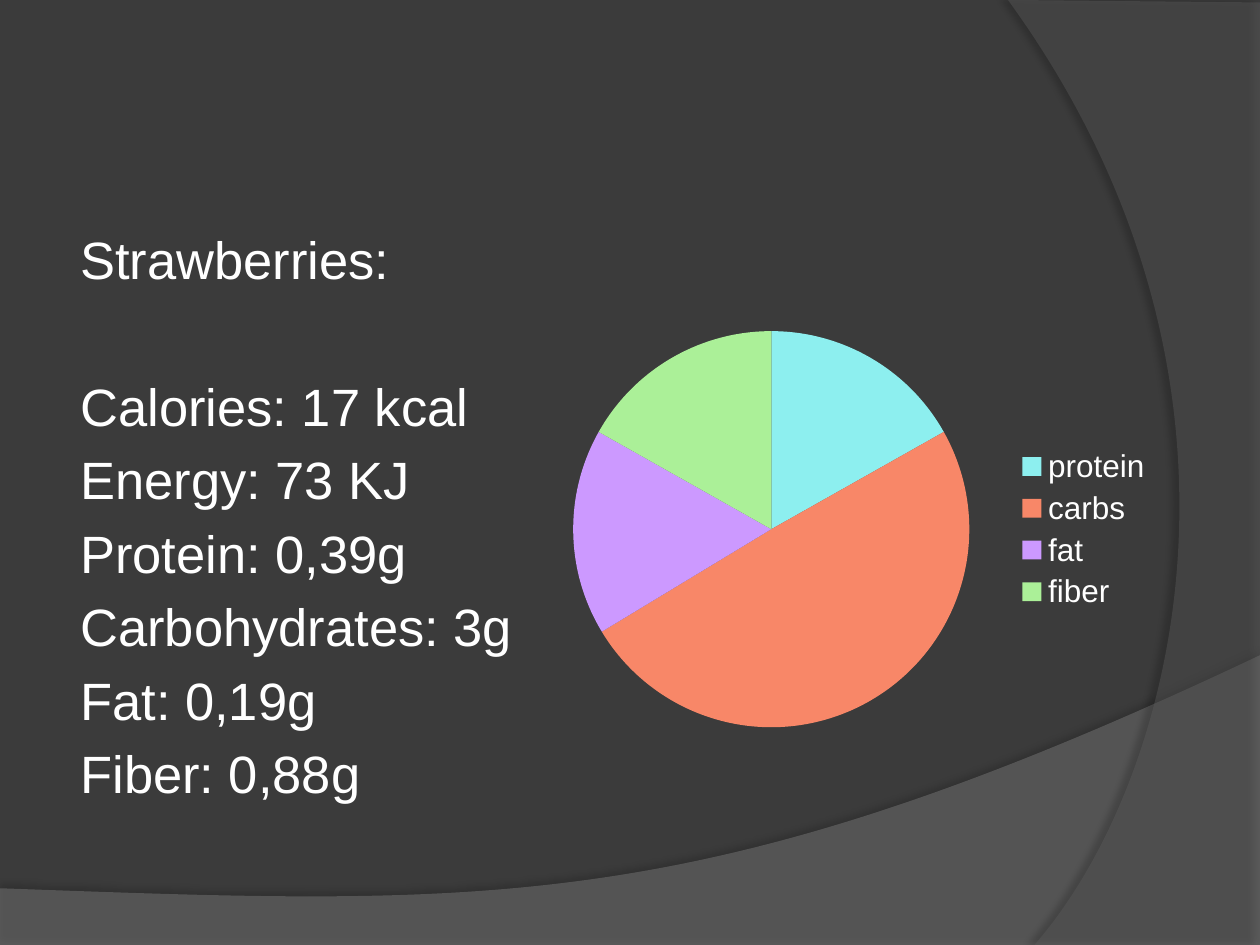
"""Build a dark nutrition slide for strawberries with a pie chart."""
from lxml import etree
from pptx import Presentation
from pptx.chart.data import CategoryChartData
from pptx.dml.color import RGBColor
from pptx.enum.chart import XL_CHART_TYPE, XL_LEGEND_POSITION
from pptx.oxml.ns import qn
from pptx.util import Inches, Pt

PIE = XL_CHART_TYPE.PIE
RIGHT = XL_LEGEND_POSITION.RIGHT

FONT = "Arial"
DARK = RGBColor(0x3B, 0x3B, 0x3B)
WHITE = RGBColor(0xFF, 0xFF, 0xFF)
BLACK = RGBColor(0, 0, 0)
MID_GRAY = RGBColor(0x7F, 0x7F, 0x7F)
DIM_GRAY = RGBColor(0x5E, 0x5E, 0x5E)

HEADING = "Strawberries:"
FACTS = [
    "Calories: 17 kcal",
    "Energy: 73 KJ",
    "Protein: 0,39g",
    "Carbohydrates: 3g",
    "Fat: 0,19g",
    "Fiber: 0,88g",
]
SHARES = [
    ("protein", 17, RGBColor(0x8D, 0xEF, 0xEF)),
    ("carbs", 50, RGBColor(0xF8, 0x87, 0x68)),
    ("fat", 17, RGBColor(0xCC, 0x99, 0xFF)),
    ("fiber", 17, RGBColor(0xAB, 0xF0, 0x98)),
]
WAVES = [
    {"corners": [(0, 7.05), (0, 7.51), (10, 7.51)],
     "curve": [(10, 5.2), (5.59, 7.29), (3.91, 7.19), (0, 7.05)],
     "width": 10, "color": MID_GRAY, "alpha": 45,
     "shadow": {"alpha": 35, "blur": 4, "dist": 3.5, "angle": 270}},
    {"corners": [(10, 0.02), (10, 7.5)],
     "curve": [(8.21, 7.5), (9.35, 6.19), (10.18, 3), (8, 0)],
     "width": 2, "color": DIM_GRAY, "alpha": 40,
     "shadow": {"alpha": 45, "blur": 4, "dist": 4, "angle": 180}},
]
TEXT_SIZE = 30
PARA_GAP = 6
LINE_PITCH = 42


def set_alpha(color, percent):
    etree.SubElement(color, qn("a:alpha"), val=str(percent * 1000))


def add_shadow(sp, alpha, blur, dist, angle):
    effects = etree.SubElement(sp._element.spPr, qn("a:effectLst"))
    shadow = etree.SubElement(
        effects, qn("a:outerShdw"), blurRad=str(Pt(blur)), dist=str(Pt(dist)),
        dir=str(angle * 60000), algn="ctr", rotWithShape="0")
    set_alpha(etree.SubElement(shadow, qn("a:srgbClr"), val=str(BLACK)), alpha)


def bend_last_segments(sp, width):
    outline = sp._element.spPr.find(".//" + qn("a:pathLst"))[0]
    segments = outline.findall(qn("a:lnTo"))[-3:]
    curve = etree.Element(qn("a:cubicBezTo"))
    segments[0].addprevious(curve)
    for segment in segments:
        curve.append(segment[0])
        outline.remove(segment)
    sp.width = width
    outline.set("w", str(width))


def add_wave(s, wave):
    points = [(Inches(x), Inches(y)) for x, y in wave["corners"] + wave["curve"]]
    builder = s.shapes.build_freeform(*points[0])
    builder.add_line_segments(points[1:], close=True)
    sp = builder.convert_to_shape()
    bend_last_segments(sp, Inches(wave["width"]))
    sp.fill.solid()
    sp.fill.fore_color.rgb = wave["color"]
    set_alpha(sp._element.spPr.find(".//" + qn("a:srgbClr")), wave["alpha"])
    sp.line.fill.background()
    add_shadow(sp, **wave["shadow"])


def add_facts(s):
    sp = s.shapes.add_textbox(Inches(0.5), Inches(1.75), Inches(8.17), Inches(4.95))
    tf = sp.text_frame
    tf.word_wrap = True
    gaps = [0, LINE_PITCH + PARA_GAP] + [PARA_GAP] * (len(FACTS) - 1)
    for i, (text, gap) in enumerate(zip([HEADING] + FACTS, gaps)):
        p = tf.add_paragraph() if i else tf.paragraphs[0]
        p.space_before = Pt(gap)
        pPr = p._p.get_or_add_pPr()
        pPr.set("marL", str(Inches(0.46)))
        pPr.set("indent", str(Inches(-0.42)))
        r = p.add_run()
        r.text = text
        r.font.name = FONT
        r.font.size = Pt(TEXT_SIZE)
        r.font.color.rgb = WHITE


def add_pie(s):
    data = CategoryChartData()
    data.categories = [name for name, _, _ in SHARES]
    data.add_series("Series 1", [value for _, value, _ in SHARES])
    chart = s.shapes.add_chart(PIE, Inches(4.21), Inches(2.49),
                               Inches(5.04), Inches(3.42), data).chart
    chart.has_title = False
    chart.font.name = FONT
    chart.font.size = Pt(18)
    chart.font.color.rgb = WHITE
    chart.has_legend = True
    chart.legend.position = RIGHT
    chart.legend.include_in_layout = False
    plot = chart.plots[0]
    plot.vary_by_categories = True
    for i, (_, _, color) in enumerate(SHARES):
        point = plot.series[0].points[i]
        point.format.fill.solid()
        point.format.fill.fore_color.rgb = color
        point.format.line.fill.background()


def main():
    prs = Presentation()
    prs.slide_width, prs.slide_height = Inches(10), Inches(7.5)
    s = prs.slides.add_slide(prs.slide_layouts[6])
    s.background.fill.solid()
    s.background.fill.fore_color.rgb = DARK
    for wave in WAVES:
        add_wave(s, wave)
    add_facts(s)
    add_pie(s)
    prs.save("out.pptx")


if __name__ == "__main__":
    main()
